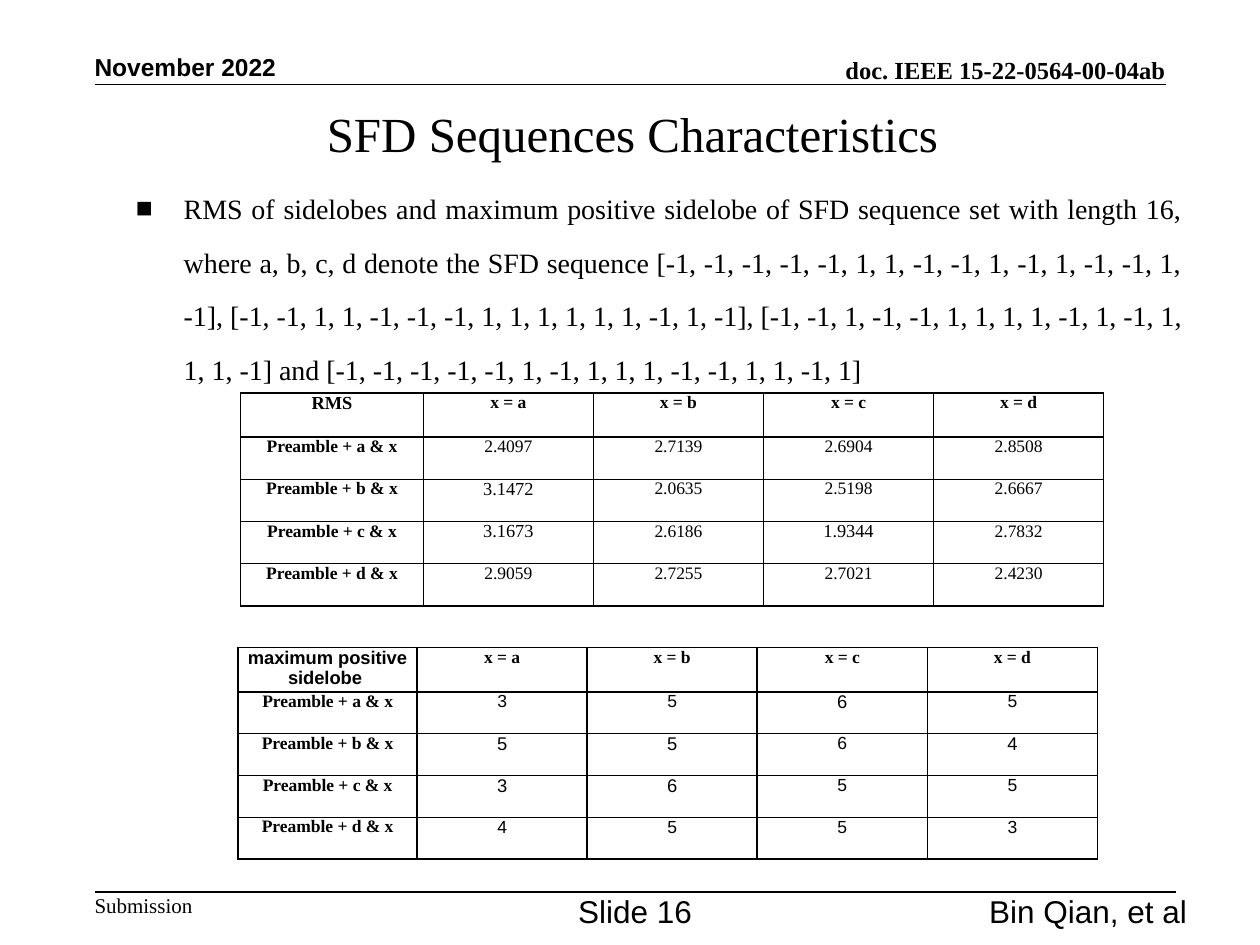
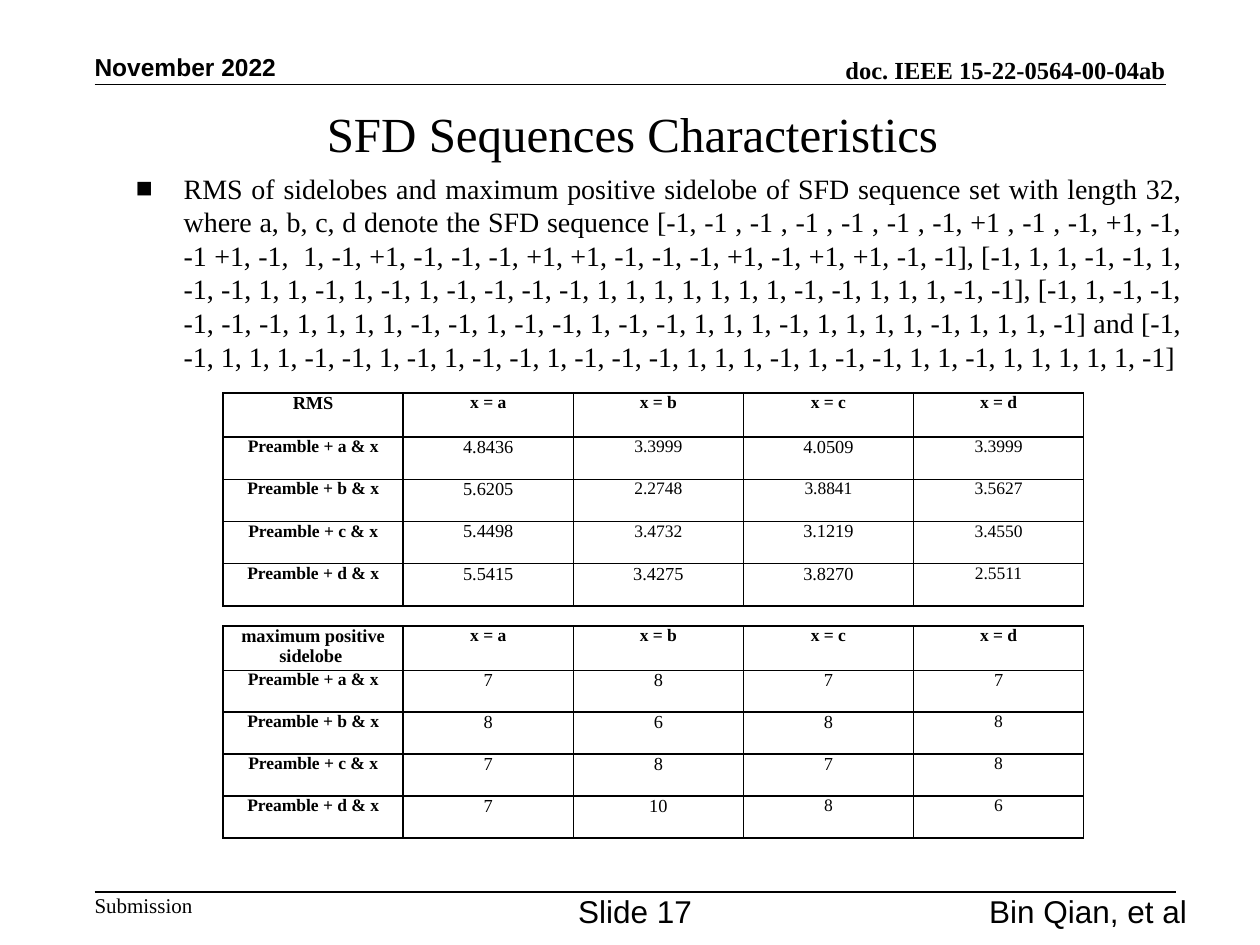
from dataclasses import dataclass
from lxml.etree import SubElement
from pptx import Presentation
from pptx.dml.color import RGBColor
from pptx.enum.shapes import MSO_CONNECTOR as Connector
from pptx.enum.text import MSO_ANCHOR as Anchor, MSO_AUTO_SIZE as AutoSize, PP_ALIGN as Align
from pptx.oxml.ns import qn
from pptx.util import Inches, Pt


@dataclass(frozen=True)
class Theme:
    ink: RGBColor = RGBColor(0, 0, 0)
    paper: RGBColor = RGBColor(255, 255, 255)
    serif: str = "Times New Roman"
    sans: str = "Arial"
    title: float = 28
    footer: float = 18
    body: float = 16
    header: float = 14
    label: float = 12
    cell_large: float = 10.5
    cell: float = 10
    rule: float = 1


theme = Theme()


def write(frame, text, size, font=theme.serif, bold=False, align=Align.LEFT):
    frame.text = text
    paragraph = frame.paragraphs[0]
    paragraph.alignment = align
    run_font = paragraph.runs[0].font
    run_font.name, run_font.size, run_font.bold = font, Pt(size), bold
    run_font.color.rgb = theme.ink
    return paragraph


def add_text(slide, box, text, size, font=theme.serif, bold=False, align=Align.LEFT,
             anchor=Anchor.TOP, inset=(0, 0), fit=AutoSize.SHAPE_TO_FIT_TEXT):
    frame = slide.shapes.add_textbox(*map(Inches, box)).text_frame
    frame.margin_left = frame.margin_right = Inches(inset[0])
    frame.margin_top = frame.margin_bottom = Inches(inset[1])
    frame.word_wrap, frame.auto_size, frame.vertical_anchor = True, fit, anchor
    return write(frame, text, size, font, bold, align)


intro = ("RMS of sidelobes and maximum positive sidelobe of SFD sequence set with length {}, "
         "where a, b, c, d denote the SFD sequence {}, {}, {} and {}")
sequences_16 = [
    "[-1, -1, -1, -1, -1, 1, 1, -1, -1, 1, -1, 1, -1, -1, 1, -1]",
    "[-1, -1, 1, 1, -1, -1, -1, 1, 1, 1, 1, 1, 1, -1, 1, -1]",
    "[-1, -1, 1, -1, -1, 1, 1, 1, 1, -1, 1, -1, 1, 1, 1, -1]",
    "[-1, -1, -1, -1, -1, 1, -1, 1, 1, 1, -1, -1, 1, 1, -1, 1]",
]
sequences_32 = [
    "[-1, -1 , -1 , -1 , -1 , -1 , -1, +1 , -1 , -1, +1, -1, -1 +1, -1,  1, -1, +1, -1, -1, -1, "
    "+1, +1, -1, -1, -1, +1, -1, +1, +1, -1, -1]",
    "[-1, 1, 1, -1, -1, 1, -1, -1, 1, 1, -1, 1, -1, 1, -1, -1, -1, -1, 1, 1, 1, 1, 1, 1, 1, "
    "-1, -1, 1, 1, 1, -1, -1]",
    "[-1, 1, -1, -1, -1, -1, -1, 1, 1, 1, 1, -1, -1, 1, -1, -1, 1, -1, -1, 1, 1, 1, -1, 1, 1, "
    "1, 1, -1, 1, 1, 1, -1]",
    "[-1, -1, 1, 1, 1, -1, -1, 1, -1, 1, -1, -1, 1, -1, -1, -1, 1, 1, 1, -1, 1, -1, -1, 1, 1, "
    "-1, 1, 1, 1, 1, 1, -1]",
]
rms_16 = dict(
    corner="RMS", font=theme.serif, box=(1.91, 3.12, 6.85, 1.69),
    values=["2.4097 2.7139 2.6904 2.8508", "3.1472 2.0635 2.5198 2.6667",
            "3.1673 2.6186 1.9344 2.7832", "2.9059 2.7255 2.7021 2.4230"],
    large_columns=["", "a", "ac", ""])
sidelobe_16 = dict(
    corner="maximum positive sidelobe ", font=theme.sans, box=(1.89, 5.14, 6.82, 1.68),
    values=["3 5 6 5", "5 5 6 4", "3 6 5 5", "4 5 5 3"],
    large_columns=["c", "abd", "ab", ""])
rms_32 = dict(
    corner="RMS", font=theme.serif, box=(1.77, 3.12, 6.83, 1.69),
    values=["4.8436 3.3999 4.0509 3.3999", "5.6205 2.2748 3.8841 3.5627",
            "5.4498 3.4732 3.1219 3.4550", "5.5415 3.4275 3.8270 2.5511"],
    large_columns=["ac", "a", "ac", "abc"])
sidelobe_32 = dict(
    corner="maximum positive sidelobe ", font=theme.serif, box=(1.77, 4.97, 6.83, 1.68),
    values=["7 8 7 7", "8 6 8 8", "7 8 7 8", "7 10 8 6"],
    large_columns=["abcd", "abc", "abc", "ab"])
pages = [
    (16, 16, sequences_16, 1.6, [rms_16, sidelobe_16]),
    (17, 32, sequences_32, 1.0, [rms_32, sidelobe_32]),
]
letters = "abcd"
value_width, heading_height = 1.35, 0.35

deck = Presentation()
deck.slide_width, deck.slide_height = Inches(10), Inches(7.5)

for number, length, sequences, spacing, results in pages:
    slide = deck.slides.add_slide(deck.slide_layouts[6])

    add_text(slide, (3.43, 0.43, 5.82, 0.24), "doc. IEEE 15-22-0564-00-04ab", theme.header,
             bold=True, align=Align.RIGHT, anchor=Anchor.BOTTOM)
    add_text(slide, (0.75, 7.08, 0.78, 0.2), "Submission", theme.label)
    for right, y in [(9.25, 0.67), (9.33, 7.08)]:
        rule = slide.shapes.add_connector(
            Connector.STRAIGHT, Inches(0.75), Inches(y), Inches(right), Inches(y))
        rule.line.color.rgb, rule.line.width = theme.ink, Pt(theme.rule)
        SubElement(rule._element.spPr, qn("a:effectLst"))

    add_text(slide, (0.77, 0.47, 8.5, 1.17), "SFD Sequences Characteristics", theme.title,
             align=Align.CENTER, anchor=Anchor.MIDDLE, inset=(0.1, 0.05), fit=AutoSize.NONE)
    add_text(slide, (0.75, 0.41, 1.75, 0.24), "November 2022", theme.header, theme.sans,
             bold=True, anchor=Anchor.BOTTOM)
    add_text(slide, (6, 7.08, 3.42, 0.2), "Bin Qian, et al", theme.footer, theme.sans,
             align=Align.RIGHT)
    add_text(slide, (4.54, 7.08, 1, 0.2), f"Slide {number}", theme.footer, theme.sans,
             align=Align.CENTER)

    summary = add_text(slide, (0.98, 1.31, 8.5, 5.56), intro.format(length, *sequences),
                       theme.body, align=Align.JUSTIFY, inset=(0.1, 0.05), fit=AutoSize.NONE)
    summary.line_spacing = spacing
    properties = summary._p.get_or_add_pPr()
    properties.set("marL", str(Inches(0.38)))
    properties.set("indent", str(-Inches(0.38)))
    SubElement(properties, qn("a:buFont"), typeface=theme.serif)
    SubElement(properties, qn("a:buChar"), char="■")

    for result in results:
        left, top, width, height = result["box"]
        grid = slide.shapes.add_table(5, 5, *map(Inches, result["box"])).table
        grid.first_row = grid.horz_banding = False
        for index in range(5):
            grid.columns[index].width = Inches(value_width if index else width - 4 * value_width)
            grid.rows[index].height = Inches(
                (height - heading_height) / 4 if index else heading_height)

        rows = [[result["corner"]] + [f"x = {letter}" for letter in letters]]
        for letter, values in zip(letters, result["values"]):
            rows.append([f"Preamble + {letter} & x"] + values.split())

        for row, texts in enumerate(rows):
            for column, text in enumerate(texts):
                cell = grid.cell(row, column)
                is_value = row > 0 and column > 0
                is_corner = row == column == 0
                is_large = is_corner or (
                    is_value and letters[column - 1] in result["large_columns"][row - 1])
                write(cell.text_frame, text, theme.cell_large if is_large else theme.cell,
                      result["font"] if is_value or is_corner else theme.serif,
                      not is_value, Align.CENTER)
                cell.margin_left = cell.margin_right = Inches(0.07)
                cell.margin_top = cell.margin_bottom = 0
                cell_properties = cell._tc.get_or_add_tcPr()
                for edge in ("a:lnL", "a:lnR", "a:lnT", "a:lnB"):
                    border = SubElement(cell_properties, qn(edge), w=str(Pt(theme.rule)))
                    ink = SubElement(border, qn("a:solidFill"))
                    SubElement(ink, qn("a:srgbClr"), val=str(theme.ink))
                if row % 2:
                    cell.fill.solid()
                    cell.fill.fore_color.rgb = theme.paper
                    tint = cell_properties.find(qn("a:solidFill")).find(qn("a:srgbClr"))
                    SubElement(tint, qn("a:alpha"), val="20000")
                else:
                    cell.fill.background()

deck.save("out.pptx")
